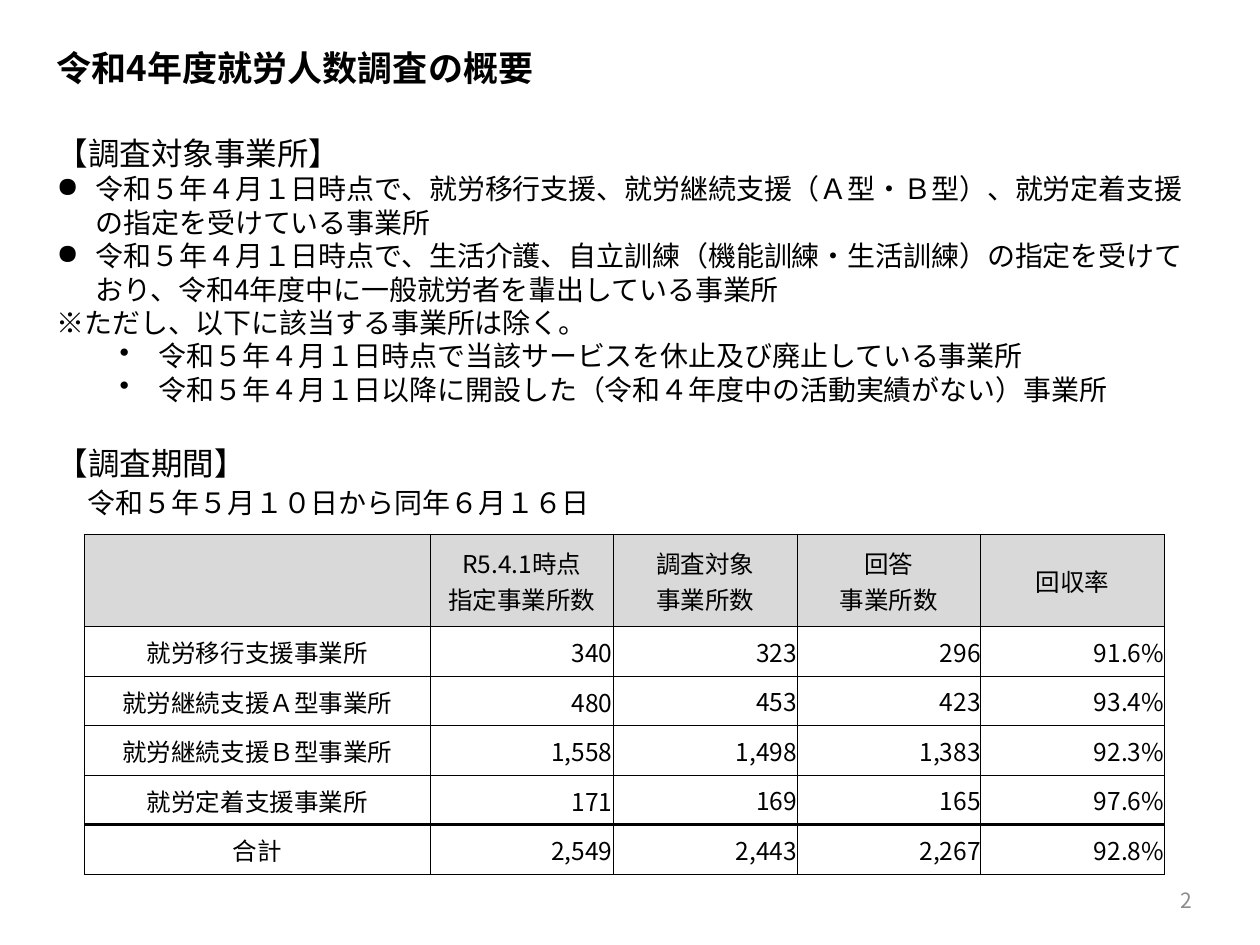
from dataclasses import dataclass

from lxml import etree
from pptx import Presentation
from pptx.dml.color import RGBColor
from pptx.enum.text import MSO_ANCHOR, MSO_AUTO_SIZE, PP_ALIGN
from pptx.oxml.ns import qn
from pptx.util import Cm, Pt

LEFT, CENTER, RIGHT = PP_ALIGN.LEFT, PP_ALIGN.CENTER, PP_ALIGN.RIGHT
TOP, MIDDLE = MSO_ANCHOR.TOP, MSO_ANCHOR.MIDDLE

FONT = "Noto Sans CJK JP"
BLACK = RGBColor(0x00, 0x00, 0x00)
GRAY = RGBColor(0x8C, 0x8C, 0x8C)
HEADER_FILL = RGBColor(0xD9, 0xD9, 0xD9)

THIN, THICK = Pt(0.5), Pt(2)
CELL_INSET = Cm(0.02)


@dataclass
class Line:
    text: str
    size: float = 16
    pitch: float = 19.1
    before: float = 0
    bullet: str = ""
    indent: float = 0  # cm, left edge of the text
    level: int = 0


SURVEY_LINES = [
    Line("【調査対象事業所】", size=18, pitch=21.6),
    Line("令和５年４月１日時点で、就労移行支援、就労継続支援（Ａ型・Ｂ型）、"
         "就労定着支援の指定を受けている事業所", bullet="●", indent=0.79),
    Line("令和５年４月１日時点で、生活介護、自立訓練（機能訓練・生活訓練）の指定を受けており、"
         "令和4年度中に一般就労者を輩出している事業所", bullet="●", indent=0.79),
    Line("※ただし、以下に該当する事業所は除く。"),
    Line("令和５年４月１日時点で当該サービスを休止及び廃止している事業所",
         bullet="•", indent=2.06, level=1),
    Line("令和５年４月１日以降に開設した（令和４年度中の活動実績がない）事業所",
         bullet="•", indent=2.06, level=1),
    Line("【調査期間】", size=18, pitch=21.6, before=21.7),
    Line("令和５年５月１０日から同年６月１６日", pitch=21.6, indent=0.63),
]
HANGING = 0.79

HEADERS = ["", "R5.4.1時点\n指定事業所数", "調査対象\n事業所数", "回答\n事業所数", "回収率"]
RESULTS = [
    ("就労移行支援事業所", "340", "323", "296", "91.6%"),
    ("就労継続支援Ａ型事業所", "480", "453", "423", "93.4%"),
    ("就労継続支援Ｂ型事業所", "1,558", "1,498", "1,383", "92.3%"),
    ("就労定着支援事業所", "171", "169", "165", "97.6%"),
    ("合計", "2,549", "2,443", "2,267", "92.8%"),
]
COLUMN_WIDTHS = [6.96] + [3.7] * 4
ROW_HEIGHTS = [1.86] + [1.0] * len(RESULTS)


def write(paragraph, text: str, *, size: float, align=LEFT, color=BLACK, bold=False) -> None:
    """Add formatted text to a paragraph."""
    paragraph.alignment = align
    run = paragraph.add_run()
    run.text = text
    run.font.size = Pt(size)
    run.font.bold = bold
    run.font.color.rgb = color
    run.font.name = FONT
    etree.SubElement(run.font._element, qn("a:ea"), typeface=FONT)


def add_line(paragraph, line: Line) -> None:
    properties = paragraph._p.get_or_add_pPr()
    properties.set("marL", str(Cm(line.indent)))
    if line.bullet:
        properties.set("indent", str(-Cm(HANGING)))
        etree.SubElement(properties, qn("a:buChar"), char=line.bullet)
    paragraph.level = line.level
    paragraph.line_spacing = Pt(line.pitch)
    paragraph.space_before = Pt(line.before)
    write(paragraph, line.text, size=line.size)


def draw_borders(cell, top: int, bottom: int) -> None:
    properties = cell._tc.get_or_add_tcPr()
    for side, width in (("L", THIN), ("R", THIN), ("T", top), ("B", bottom)):
        border = etree.SubElement(properties, qn(f"a:ln{side}"), w=str(width))
        fill = etree.SubElement(border, qn("a:solidFill"))
        etree.SubElement(fill, qn("a:srgbClr"), val=str(BLACK))


def fill_cell(cell, text: str, row: int, column: int) -> None:
    total_row = len(RESULTS)
    draw_borders(cell, top=THICK if row == total_row else THIN,
                 bottom=THICK if row == total_row - 1 else THIN)
    if row == 0:
        cell.fill.solid()
        cell.fill.fore_color.rgb = HEADER_FILL
    else:
        cell.fill.background()
    is_number = row > 0 and column > 0
    inset = 0 if is_number and column > 1 else CELL_INSET
    cell.margin_left = cell.margin_right = cell.margin_top = inset
    cell.margin_bottom = 0
    cell.vertical_anchor = MIDDLE
    if not text:
        return
    frame = cell.text_frame
    for index, part in enumerate(text.split("\n")):
        paragraph = frame.add_paragraph() if index else frame.paragraphs[0]
        write(paragraph, part, size=14, align=RIGHT if is_number else CENTER)


def add_results_table(slide) -> None:
    rows = [HEADERS, *RESULTS]
    table = slide.shapes.add_table(
        len(rows), len(HEADERS), Cm(1.71), Cm(10.77),
        Cm(sum(COLUMN_WIDTHS)), Cm(sum(ROW_HEIGHTS))).table
    table.first_row = table.horz_banding = False
    for column, width in zip(table.columns, COLUMN_WIDTHS):
        column.width = Cm(width)
    for row, height in zip(table.rows, ROW_HEIGHTS):
        row.height = Cm(height)
    for r, values in enumerate(rows):
        for c, text in enumerate(values):
            fill_cell(table.cell(r, c), text, r, c)


def main() -> None:
    presentation = Presentation()
    presentation.slide_width, presentation.slide_height = Cm(25.4), Cm(19.05)
    slide = presentation.slides.add_slide(presentation.slide_layouts[5])

    # Title
    title = slide.shapes.title
    title.left, title.top, title.width, title.height = Cm(0.89), Cm(0.81), Cm(23.37), Cm(1.3)
    title.text_frame.auto_size = MSO_AUTO_SIZE.NONE
    title.text_frame.vertical_anchor = TOP
    write(title.text_frame.paragraphs[0], "令和4年度就労人数調査の概要", size=20, bold=True)

    # Survey targets and period
    survey = slide.shapes.add_textbox(Cm(0.89), Cm(2.58), Cm(23.37), Cm(8.2)).text_frame
    survey.word_wrap = True
    for index, line in enumerate(SURVEY_LINES):
        add_line(survey.add_paragraph() if index else survey.paragraphs[0], line)

    # Response counts
    add_results_table(slide)

    # Page number
    page_number = slide.shapes.add_textbox(Cm(18.57), Cm(17.63), Cm(5.72), Cm(1.02)).text_frame
    page_number.word_wrap = True
    page_number.vertical_anchor = MIDDLE
    write(page_number.paragraphs[0], "2", size=12, align=RIGHT, color=GRAY)

    presentation.save("out.pptx")


if __name__ == "__main__":
    main()
